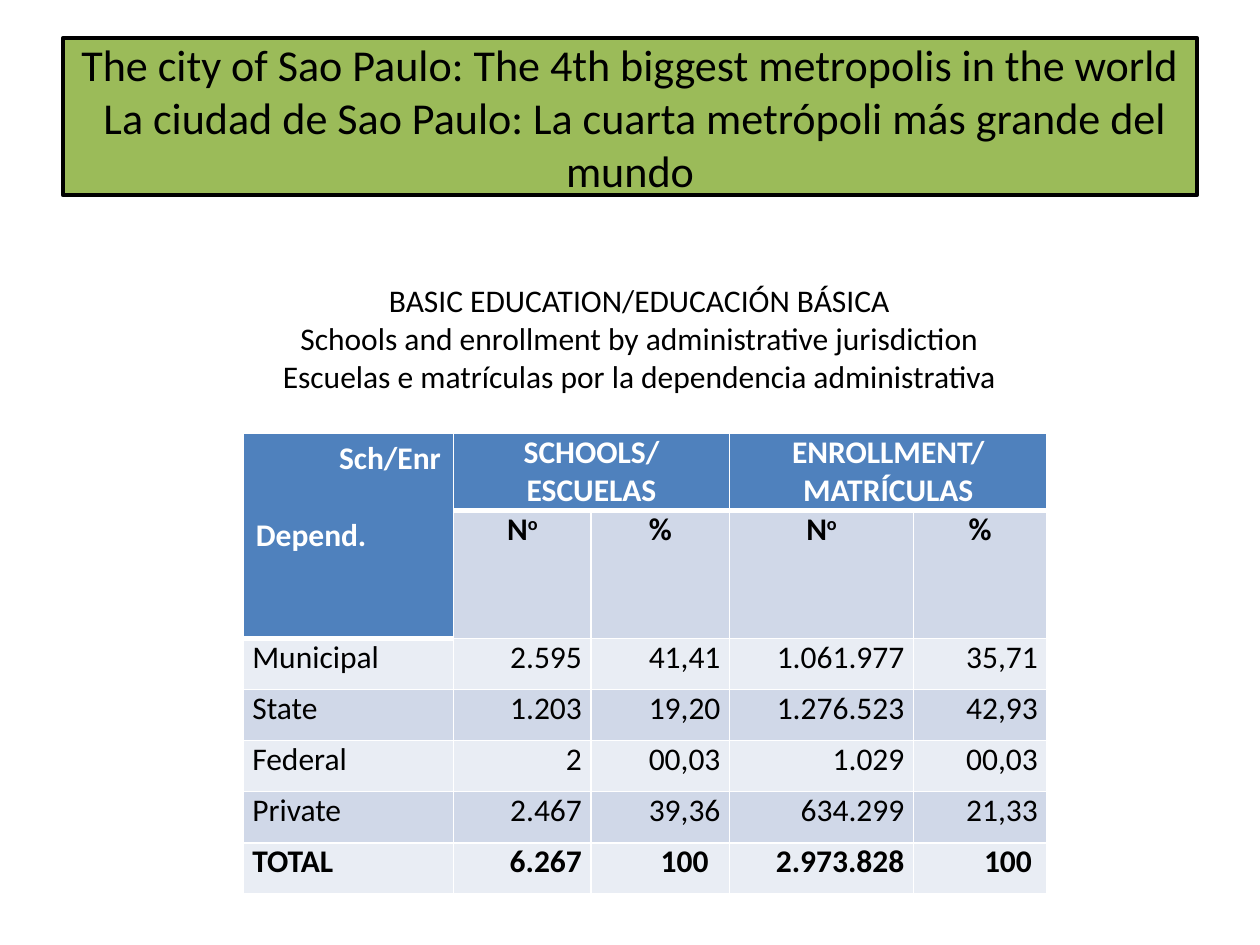
"""Build the slide on schools and enrollment in the city of Sao Paulo."""
from lxml import etree
from pptx import Presentation
from pptx import util as u
from pptx.dml.color import RGBColor
from pptx.enum import text
from pptx.oxml import ns

BLACK = RGBColor(0x00, 0x00, 0x00)
WHITE = RGBColor(0xFF, 0xFF, 0xFF)
GREEN = RGBColor(0x9B, 0xBB, 0x59)
BLUE = RGBColor(0x4F, 0x81, 0xBD)
BANDS = (RGBColor(0xE9, 0xED, 0xF4), RGBColor(0xD0, 0xD8, 0xE8))
FONT = "Calibri"
LEFT, CENTER, RIGHT = text.PP_ALIGN.LEFT, text.PP_ALIGN.CENTER, text.PP_ALIGN.RIGHT

TITLE = ("The city of Sao Paulo: The 4th biggest metropolis in the world\v"
         " La ciudad de Sao Paulo: La cuarta metrópoli más grande del mundo")
CAPTION = ["BASIC EDUCATION/EDUCACIÓN BÁSICA",
           "Schools and enrollment by administrative jurisdiction",
           "Escuelas e matrículas por la dependencia administrativa"]
GROUPS = {1: ["SCHOOLS/", "ESCUELAS"], 3: ["ENROLLMENT/", "MATRÍCULAS"]}
CORNER = ["Sch/Enr", "Depend."]
UNITS = [("N", "o"), ("%",), ("N", "o"), ("%",)]
RECORDS = [
    ("Municipal", "2.595", "41,41", "1.061.977", "35,71"),
    ("State", "1.203", "19,20", "1.276.523", "42,93"),
    ("Federal", "2", "00,03", "1.029", "00,03"),
    ("Private", "2.467", "39,36", "634.299", "21,33"),
    ("TOTAL", "6.267", "100", "2.973.828", "100"),
]
WIDTHS = [120.2, 78.5, 79.2, 105.1, 76.3]
ROW_HEIGHT = 29.2
TOTAL_INSETS = {2: 12, 4: 8.6}


def style(frame, size, color, bold, align):
    for para in frame.paragraphs:
        para.alignment = align
        for span in para.runs:
            span.font.name = FONT
            span.font.size = u.Pt(size)
            span.font.bold = bold
            span.font.color.rgb = color


def add_borders(cell, bottom):
    props = cell._tc.get_or_add_tcPr()
    for index, side in enumerate("LRTB"):
        width = bottom if side == "B" else 1
        line = etree.Element(ns.qn(f"a:ln{side}"), w=str(u.Pt(width)))
        fill = etree.SubElement(line, ns.qn("a:solidFill"))
        etree.SubElement(fill, ns.qn("a:srgbClr"), val=str(WHITE))
        props.insert(index, line)


def fill_cell(cell, content, color, bold, align):
    cell.margin_left = cell.margin_right = u.Pt(5.2)
    cell.margin_top = cell.margin_bottom = 0
    cell.text_frame.text = content
    style(cell.text_frame, 18, color, bold, align)


def add_title(page):
    box = page.shapes.title
    box.left, box.top, box.width, box.height = map(u.Pt, (36, 21.6, 648, 90))
    box.fill.solid()
    box.fill.fore_color.rgb = GREEN
    box.line.color.rgb = BLACK
    box.line.width = u.Pt(2.25)
    frame = box.text_frame
    frame.text = TITLE
    frame.word_wrap = True
    frame.auto_size = text.MSO_AUTO_SIZE.NONE
    frame.vertical_anchor = text.MSO_ANCHOR.MIDDLE
    style(frame, 25.2, BLACK, False, CENTER)


def add_caption(page):
    box = page.shapes.add_textbox(*map(u.Pt, (127.4, 157, 476, 72.7)))
    frame = box.text_frame
    frame.word_wrap = True
    frame.text = "\n".join(CAPTION)
    style(frame, 18, BLACK, False, CENTER)


def add_header(table):
    corner = table.cell(0, 0)
    corner.merge(table.cell(1, 0))
    corner.text_frame.text = "\n".join(CORNER)
    style(corner.text_frame, 18, WHITE, True, RIGHT)
    depend = corner.text_frame.paragraphs[1]
    depend.alignment = LEFT
    depend.space_before = u.Pt(22)
    for col, lines in GROUPS.items():
        group = table.cell(0, col)
        group.merge(table.cell(0, col + 1))
        fill_cell(group, "\n".join(lines), WHITE, True, CENTER)
    for col, (unit, *raised) in enumerate(UNITS, 1):
        cell = table.cell(1, col)
        fill_cell(cell, unit, BLACK, True, CENTER)
        para = cell.text_frame.paragraphs[0]
        for mark in raised:
            span = para.add_run()
            span.text = mark
            style(cell.text_frame, 18, BLACK, True, CENTER)
            span.font._element.set("baseline", "30000")


def add_table(page):
    count = len(RECORDS) + 2
    frame = page.shapes.add_table(count, len(WIDTHS), u.Pt(139), u.Pt(247.7),
                                  u.Pt(sum(WIDTHS)), u.Pt(ROW_HEIGHT * count))
    table = frame.table
    for column, width in zip(table.columns, WIDTHS):
        column.width = u.Pt(width)
    for row in table.rows:
        row.height = u.Pt(ROW_HEIGHT)
    add_header(table)
    for row, record in enumerate(RECORDS, 2):
        for col, value in enumerate(record):
            fill_cell(table.cell(row, col), value, BLACK,
                      row == count - 1, RIGHT if col else LEFT)
    for col, inset in TOTAL_INSETS.items():
        table.cell(count - 1, col).margin_right = u.Pt(inset)
    for row in range(count):
        for col in range(len(WIDTHS)):
            cell = table.cell(row, col)
            header = row == 0 or (row, col) == (1, 0)
            cell.fill.solid()
            cell.fill.fore_color.rgb = BLUE if header else BANDS[row % 2]
            add_borders(cell, 3 if header else 1)


def main():
    deck = Presentation()
    deck.slide_width, deck.slide_height = u.Pt(720), u.Pt(540)
    page = deck.slides.add_slide(deck.slide_layouts[5])
    add_title(page)
    add_table(page)
    add_caption(page)
    deck.save("out.pptx")


if __name__ == "__main__":
    main()
